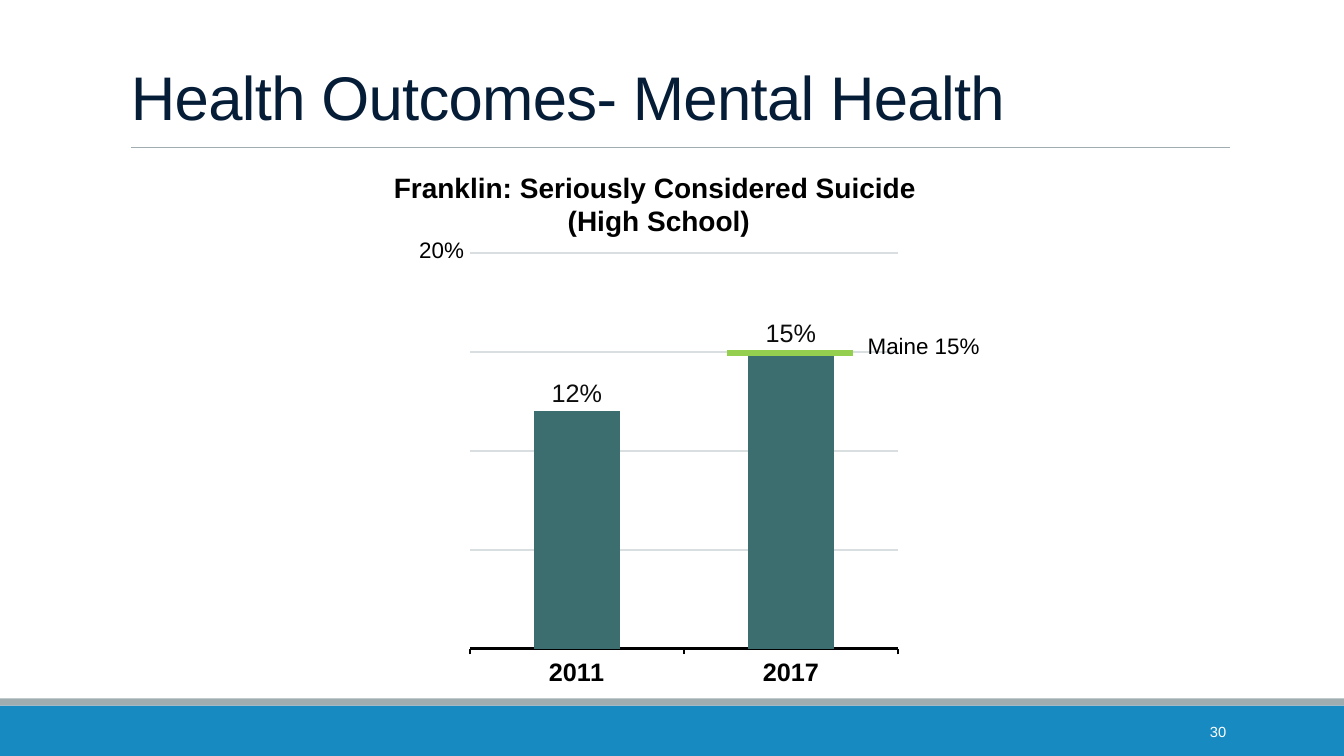
from dataclasses import dataclass

from lxml import etree
from pptx import Presentation
from pptx.chart.data import CategoryChartData
from pptx.dml.color import RGBColor
from pptx.enum.chart import XL_CHART_TYPE as CT, XL_LABEL_POSITION as LP, XL_TICK_LABEL_POSITION as TL
from pptx.enum.chart import XL_TICK_MARK as TM
from pptx.enum.shapes import MSO_CONNECTOR as MC, MSO_SHAPE as MS
from pptx.enum.text import MSO_ANCHOR as MA, PP_ALIGN as PA
from pptx.oxml import parse_xml
from pptx.oxml.ns import nsdecls, qn
from pptx.util import Inches, Pt


@dataclass(frozen=True)
class Theme:
    font: str = "Arial"
    black: str = "000000"
    white: str = "FFFFFF"
    navy: str = "061D38"
    blue: str = "178AC1"
    grey: str = "9FADB1"
    grid: str = "D9DEE0"
    teal: str = "3C6E6F"
    green: str = "94CF4F"
    label: str = "0D0D0D"
    title: float = 44
    heading: float = 20
    chart: float = 18
    note: float = 16
    number: float = 10.5


T = Theme()


def set_font(font, size, color, bold=False):
    for name, value in {"name": T.font, "size": Pt(size), "bold": bold}.items():
        setattr(font, name, value)
    font.color.rgb = RGBColor.from_string(color)


def set_line(line, color, width):
    line.color.rgb = RGBColor.from_string(color)
    line.width = Pt(width)


def add_band(s, top, height, color):
    sp = s.shapes.add_shape(MS.RECTANGLE, 0, Inches(top), Inches(13.33), Inches(height))
    sp.shadow.inherit = False
    sp.fill.solid()
    sp.fill.fore_color.rgb = RGBColor.from_string(color)
    sp.line.fill.background()


def add_rule(s, left, right, y, color, width):
    cx = s.shapes.add_connector(MC.STRAIGHT, Inches(left), Inches(y), Inches(right), Inches(y))
    set_line(cx.line, color, width)
    etree.SubElement(cx._element.spPr, qn("a:effectLst"))


def add_text(s, box, lines, size, color=T.black, bold=False, align=PA.LEFT,
             anchor=MA.TOP, spacing=None, tracking=None):
    tf = s.shapes.add_textbox(*map(Inches, box)).text_frame
    tf.word_wrap = True
    tf.vertical_anchor = anchor
    for i, line in enumerate(lines):
        p = tf.paragraphs[0] if i == 0 else tf.add_paragraph()
        p.alignment = align
        p.line_spacing = spacing
        r = p.add_run()
        r.text = line
        set_font(r.font, size, color, bold)
        if tracking is not None:
            r.font._element.set("spc", str(int(tracking * 100)))


def place_plot(chart, x, y, w, h):
    area = chart._chartSpace.chart.plotArea
    for old in area.findall(qn("c:layout")):
        area.remove(old)
    parts = {"layoutTarget": "inner", "xMode": "edge", "yMode": "edge",
             "x": x, "y": y, "w": w, "h": h}
    body = "".join(f'<c:{tag} val="{val}"/>' for tag, val in parts.items())
    area.insert(0, parse_xml(
        f'<c:layout {nsdecls("c")}><c:manualLayout>{body}</c:manualLayout></c:layout>'))


def add_column_chart(s, box, categories, values):
    data = CategoryChartData(number_format='0"%"')
    data.categories = categories
    data.add_series("Series 1", values)
    chart = s.shapes.add_chart(CT.COLUMN_CLUSTERED, *map(Inches, box), data).chart
    chart.has_legend = chart.has_title = False
    set_font(chart.font, 10, T.black)
    place_plot(chart, 0.223, 0.093, 0.769, 0.822)

    # Axes
    cat, val = chart.category_axis, chart.value_axis
    cat.major_tick_mark = TM.OUTSIDE
    cat.tick_label_position = TL.LOW
    set_font(cat.tick_labels.font, T.chart, T.black, True)
    set_line(cat.format.line, T.black, 1.5)
    limits = {"minimum_scale": 0, "maximum_scale": 20, "major_unit": 5, "visible": False}
    for name, value in limits.items():
        setattr(val, name, value)
    set_line(val.major_gridlines.format.line, T.grid, 1.5)

    # Columns and value labels
    plot = chart.plots[0]
    plot.gap_width = 150
    plot.vary_by_categories = False
    fill = plot.series[0].format.fill
    fill.solid()
    fill.fore_color.rgb = RGBColor.from_string(T.teal)
    labels = plot.series[0].data_labels
    settings = {"show_value": True, "position": LP.OUTSIDE_END,
                "number_format": '0"%"', "number_format_is_linked": False}
    for name, value in settings.items():
        setattr(labels, name, value)
    set_font(labels.font, T.chart, T.label)


def main():
    prs = Presentation()
    prs.slide_width, prs.slide_height = Inches(13.33), Inches(7.5)
    s = prs.slides.add_slide(prs.slide_layouts[6])

    # Footer bands and title
    add_band(s, 7, 0.5, T.blue)
    add_band(s, 6.93, 0.07, T.grey)
    add_rule(s, 1.3, 12.2, 1.46, T.grey, 0.5)
    add_text(s, (1.2, 0.31, 11, 1.06), ["Health Outcomes- Mental Health"], T.title, T.navy,
             anchor=MA.BOTTOM, spacing=0.85, tracking=-0.5)
    add_text(s, (10.83, 7.06, 1.43, 0.4), ["30"], T.number, T.white,
             align=PA.RIGHT, anchor=MA.MIDDLE)

    # Chart with its heading
    add_text(s, (3.22, 1.64, 6.63, 1.18),
             ["Franklin: Seriously Considered Suicide ", "(High School)"],
             T.heading, bold=True, align=PA.CENTER)
    add_column_chart(s, (3.43, 2.07, 5.52, 4.77), ["2011", "2017"], [12, 15])
    add_text(s, (4.06, 2.29, 0.76, 0.37), ["20%"], T.note)

    # State benchmark
    add_rule(s, 7.21, 8.46, 3.5, T.green, 4)
    add_text(s, (8.19, 3.25, 1.94, 0.2), ["Maine 15%"], T.note, align=PA.CENTER)

    prs.save("out.pptx")


if __name__ == "__main__":
    main()
